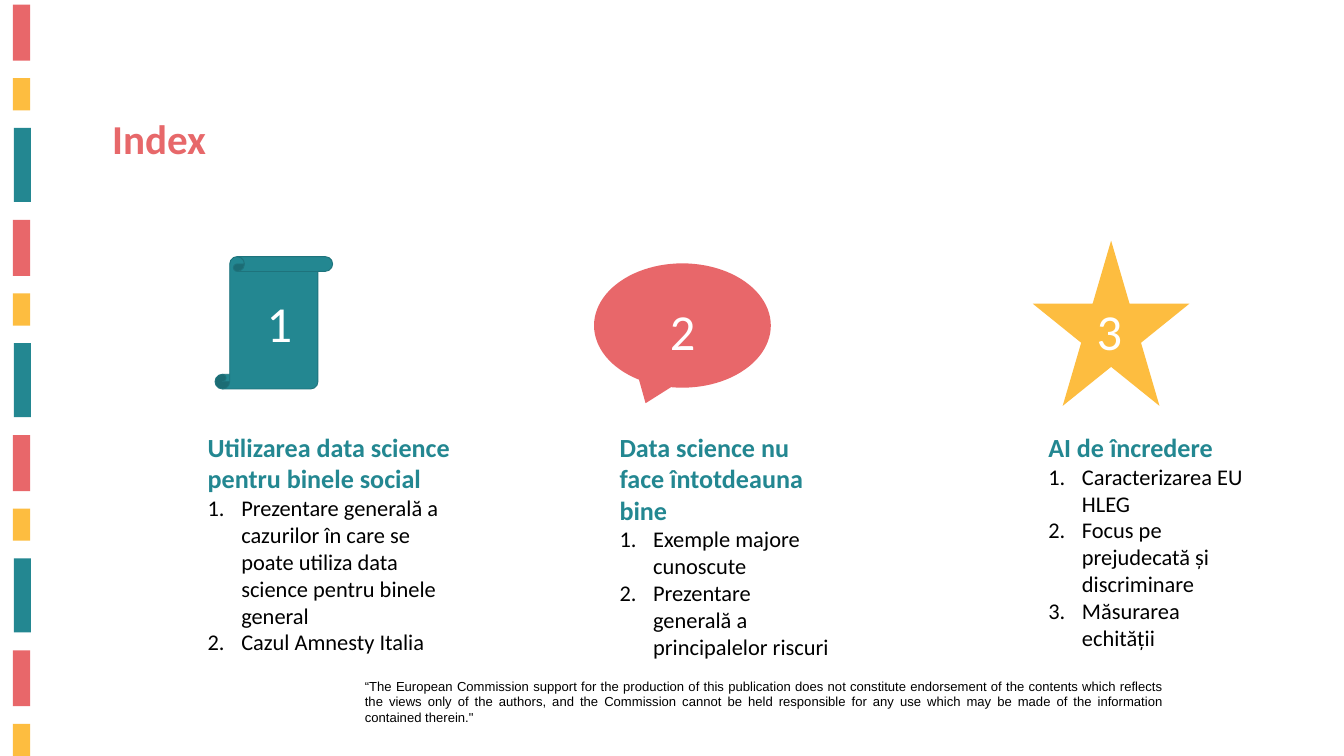
from lxml import etree
from pptx import Presentation
from pptx.dml.color import RGBColor
from pptx.enum.shapes import MSO_SHAPE
from pptx.enum.text import MSO_ANCHOR, MSO_AUTO_SIZE, PP_ALIGN
from pptx.oxml.ns import qn
from pptx.util import Pt

LEFT, JUSTIFY = PP_ALIGN.LEFT, PP_ALIGN.JUSTIFY
TOP, NO_FIT = MSO_ANCHOR.TOP, MSO_AUTO_SIZE.NONE
RECTANGLE, SCROLL = MSO_SHAPE.RECTANGLE, MSO_SHAPE.VERTICAL_SCROLL
CALLOUT, STAR = MSO_SHAPE.OVAL_CALLOUT, MSO_SHAPE.STAR_5_POINT

CORAL = RGBColor(0xE8, 0x67, 0x6A)
TITLE_CORAL = RGBColor(0xE7, 0x68, 0x6A)
YELLOW = RGBColor(0xFD, 0xBD, 0x40)
TEAL = RGBColor(0x23, 0x87, 0x91)
DARK_TEAL = RGBColor(0x1E, 0x73, 0x7C)
BLACK = RGBColor(0, 0, 0)
WHITE = RGBColor(255, 255, 255)

PAGE_WIDTH, PAGE_HEIGHT = 1440, 810
LIST_INDENT = 36

# Content
TITLE = "Index"
DISCLAIMER = (
    "“The European Commission support for the production of this publication "
    "does not constitute endorsement of the contents which reflects the views "
    "only of the authors, and the Commission cannot be held responsible for any "
    "use which may be made of the information contained therein.\""
)
SECTIONS = [
    {
        "heading": "Utilizarea data science pentru binele social",
        "items": [
            "Prezentare generală a cazurilor în care se poate utiliza data "
            "science pentru binele general",
            "Cazul Amnesty Italia",
        ],
        "text_area": (215.3, 458.6, 288.7, 249.8),
        "icon": (SCROLL, TEAL, DARK_TEAL, (230.4, 275, 126, 141.8)),
        "number_area": (278.6, 309.6, 113.8, 72.7),
    },
    {
        "heading": "Data science nu face întotdeauna bine",
        "items": [
            "Exemple majore cunoscute",
            "Prezentare generală a principalelor riscuri",
        ],
        "text_area": (656.6, 458.6, 243.4, 254.2),
        "icon": (CALLOUT, CORAL, None, (636.5, 282.2, 189.4, 133.2)),
        "number_area": (710.6, 317.5, 77.8, 72.7),
    },
    {
        "heading": "AI de încredere",
        "items": [
            "Caracterizarea EU HLEG",
            "Focus pe prejudecată și discriminare",
            "Măsurarea echității",
        ],
        "text_area": (1116, 458.6, 228.2, 244.8),
        "icon": (STAR, YELLOW, None, (1106.6, 257.8, 167.8, 177.1)),
        "number_area": (1167.8, 317.5, 108, 72.7),
    },
]

# Side stripes: left, top, width, height, colour, repeated down the page
STRIPE_PERIOD = 230.6
STRIPES = [
    (13.7, 4.9, 18.7, 60, CORAL),
    (13.7, 83.7, 18.7, 34.5, YELLOW),
    (15, 137, 18, 79.4, TEAL),
]

# Text formats
TITLE_FORMAT = {"name": "Calibri", "size": Pt(44), "bold": True}
HEADING_FORMAT = {"name": "Calibri", "size": Pt(28), "bold": True}
ITEM_FORMAT = {"name": "Calibri", "size": Pt(24), "bold": False}
NUMBER_FORMAT = {"name": "Calibri", "size": Pt(54), "bold": False}
NOTE_FORMAT = {"name": "Arial", "size": Pt(14), "bold": False}


def place(shape, area):
    shape.left, shape.top, shape.width, shape.height = map(Pt, area)


def prepare_frame(frame):
    settings = {
        "word_wrap": True, "auto_size": NO_FIT, "vertical_anchor": TOP,
        "margin_left": Pt(7.2), "margin_right": Pt(7.2),
        "margin_top": Pt(3.6), "margin_bottom": Pt(3.6),
    }
    for name, value in settings.items():
        setattr(frame, name, value)


def write(para, text, font_format, color, align=LEFT, numbered=False):
    para.alignment = align
    para.space_before = Pt(0)
    properties = para._p.get_or_add_pPr()
    indent = Pt(LIST_INDENT) if numbered else 0
    properties.set("marL", str(indent))
    properties.set("indent", str(-indent))
    if numbered:
        etree.SubElement(properties, qn("a:buFont")).set("typeface", "+mj-lt")
        etree.SubElement(properties, qn("a:buAutoNum")).set("type", "arabicPeriod")
    else:
        etree.SubElement(properties, qn("a:buNone"))
    span = para.add_run()
    span.text = text
    for name, value in font_format.items():
        setattr(span.font, name, value)
    span.font.color.rgb = color


def add_label(page, area, text, font_format, color, align=LEFT):
    box = page.shapes.add_textbox(*map(Pt, area))
    prepare_frame(box.text_frame)
    write(box.text_frame.paragraphs[0], text, font_format, color, align)


def add_figure(page, preset, area, fill, line=None):
    shape = page.shapes.add_shape(preset, *map(Pt, area))
    shape.shadow.inherit = False
    shape.fill.solid()
    shape.fill.fore_color.rgb = fill
    if line is None:
        shape.line.fill.background()
    else:
        shape.line.color.rgb = line
        shape.line.width = Pt(1)


def main():
    deck = Presentation()
    deck.slide_width, deck.slide_height = Pt(PAGE_WIDTH), Pt(PAGE_HEIGHT)
    # The comparison layout has a title and four bodies; three are used
    page = deck.slides.add_slide(deck.slide_layouts[4])
    title, *bodies = page.placeholders
    spare = bodies.pop()
    spare._element.getparent().remove(spare._element)

    # Side stripes
    for left, first_top, width, height, color in STRIPES:
        top = first_top
        while top < PAGE_HEIGHT:
            visible = min(height, PAGE_HEIGHT - top)
            add_figure(page, RECTANGLE, (left, top, width, visible), color)
            top += STRIPE_PERIOD

    # Title and disclaimer
    place(title, (113, 118.1, 487.4, 60.5))
    prepare_frame(title.text_frame)
    write(title.text_frame.paragraphs[0], TITLE, TITLE_FORMAT, TITLE_CORAL)
    add_label(page, (383.8, 722.9, 869.8, 58.3), DISCLAIMER, NOTE_FORMAT,
              BLACK, JUSTIFY)

    # Sections: icon, number, heading and numbered list
    for number, (section, body) in enumerate(zip(SECTIONS, bodies), start=1):
        preset, fill, line, area = section["icon"]
        add_figure(page, preset, area, fill, line)
        add_label(page, section["number_area"], str(number), NUMBER_FORMAT, WHITE)
        place(body, section["text_area"])
        frame = body.text_frame
        prepare_frame(frame)
        write(frame.paragraphs[0], section["heading"], HEADING_FORMAT, TEAL)
        for item in section["items"]:
            write(frame.add_paragraph(), item, ITEM_FORMAT, BLACK, numbered=True)

    deck.save("out.pptx")


if __name__ == "__main__":
    main()
